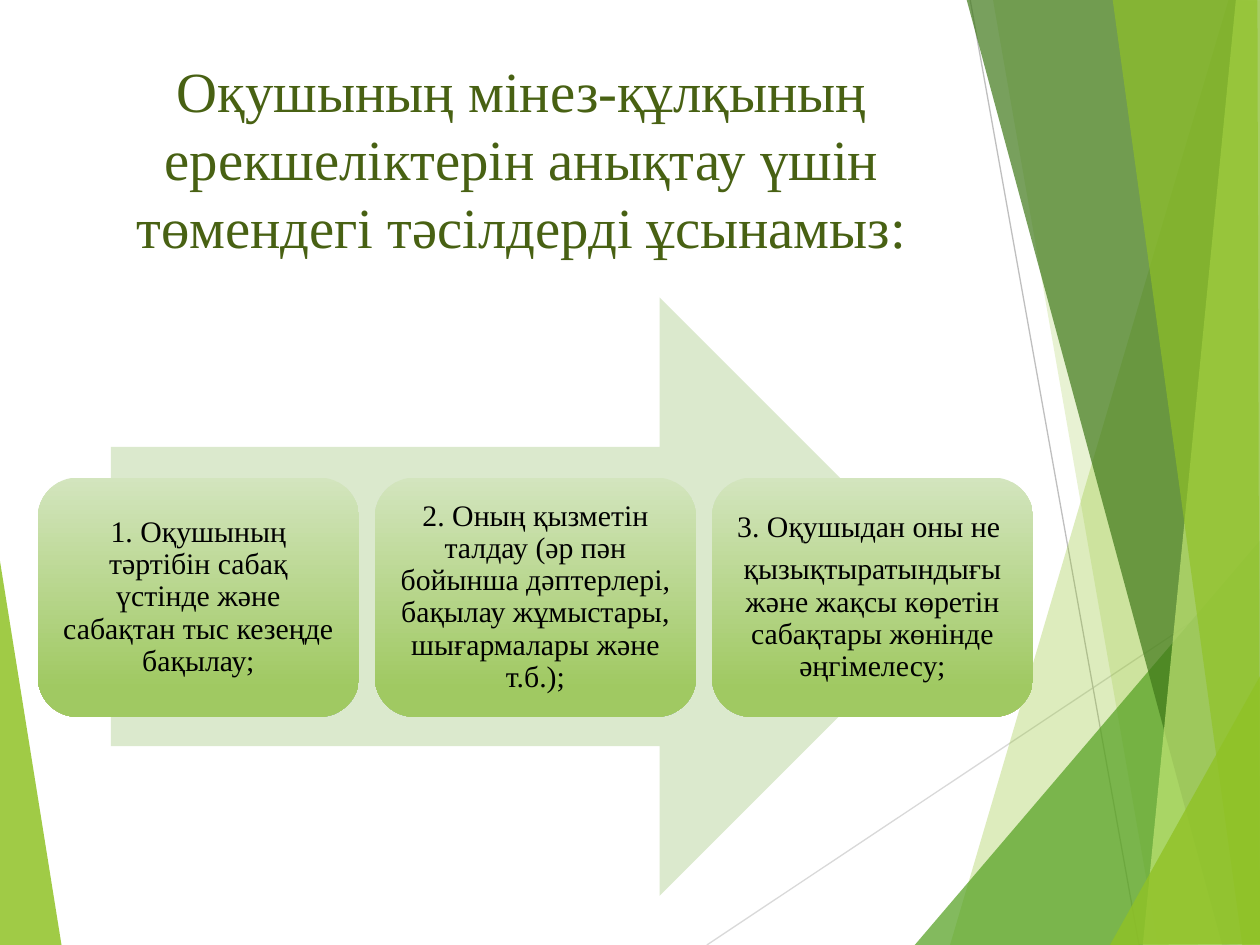
from lxml.etree import SubElement
from pptx import Presentation
from pptx.dml.color import RGBColor
from pptx.enum.shapes import MSO_CONNECTOR, MSO_SHAPE
from pptx.enum.text import MSO_ANCHOR, PP_ALIGN
from pptx.oxml.ns import qn
from pptx.util import Inches, Pt

FONT = "Times New Roman"
LIME = RGBColor(0x90, 0xC2, 0x26)
GREEN = RGBColor(0x54, 0xA0, 0x21)
DARK_GREEN = RGBColor(0x3F, 0x78, 0x19)
LIGHT_LIME = RGBColor(0xC0, 0xE4, 0x74)
PALE_GREEN = RGBColor(0xDB, 0xE9, 0xCD)
CARD_TOP = RGBColor(0xD3, 0xE5, 0xBE)
CARD_BOTTOM = RGBColor(0xA0, 0xC9, 0x62)
TITLE_COLOR = RGBColor(0x48, 0x61, 0x13)
BLACK = RGBColor(0, 0, 0)
LIGHT_GRAY = RGBColor(0xD9, 0xD9, 0xD9)
GRAY = RGBColor(0xBF, 0xBF, 0xBF)

TITLE = "Оқушының мінез-құлқының ерекшеліктерін анықтау үшін төмендегі тәсілдерді ұсынамыз:"
METHODS = [
    ["1. Оқушының тәртібін сабақ үстінде және сабақтан тыс кезеңде бақылау;"],
    ["2. Оның қызметін талдау (әр пән бойынша дәптерлері, бақылау жұмыстары, "
     "шығармалары және т.б.);"],
    ["3. Оқушыдан оны не ",
     "қызықтыратындығы және жақсы көретін сабақтары жөнінде әңгімелесу;"],
]

LEFT_FACET = ([(-0.01, 4.39), (0.49, 7.51), (-0.01, 7.5)], LIME, 85)
RIGHT_FACETS = [
    ([(9.75, 0), (7.54, 7.5), (10.02, 7.51), (10.01, 0.01)], LIME, 30),
    ([(7.88, -0.01), (9.19, 7.5), (10.01, 7.5), (10.01, -0.01)], LIME, 20),
    ([(7.26, 7.5), (10, 4.29), (10.01, 7.5)], GREEN, 72),
    ([(7.67, -0.01), (9.7, 7.5), (10.01, 7.49), (10.01, -0.01)], DARK_GREEN, 70),
    ([(9.81, -0.01), (9.07, 7.5), (10.01, 7.5), (10, -0.01)], LIGHT_LIME, 70),
    ([(8.83, -0.01), (9.86, 7.5), (10, 7.5), (9.98, -0.01)], LIME, 65),
    ([(8.81, 7.5), (10.01, 5.35), (10.01, 7.49)], LIME, 80),
]


class SlideBuilder:
    def __init__(self, slide, font):
        self.shapes = slide.shapes
        self.font = font

    def facet(self, points, color, opacity):
        """Draw a borderless polygon; opacity is in percent."""
        corners = [(Inches(x), Inches(y)) for x, y in points]
        builder = self.shapes.build_freeform(*corners[0])
        builder.add_line_segments(corners[1:], close=True)
        sp = builder.convert_to_shape()
        sp.shadow.inherit = False
        sp.line.fill.background()
        sp.fill.solid()
        sp.fill.fore_color.rgb = color
        clr = sp.fill._xPr.find(qn("a:solidFill"))[0]
        SubElement(clr, qn("a:alpha")).set("val", str(opacity * 1000))

    def line(self, start, end, color):
        ends = [Inches(v) for v in (*start, *end)]
        cxn = self.shapes.add_connector(MSO_CONNECTOR.STRAIGHT, *ends)
        cxn.line.color.rgb = color
        cxn.line.width = Pt(0.75)
        SubElement(cxn._element.spPr, qn("a:effectLst"))

    def shape(self, kind, left, top, width, height):
        box = [Inches(v) for v in (left, top, width, height)]
        sp = self.shapes.add_shape(kind, *box)
        sp.shadow.inherit = False
        sp.line.fill.background()
        return sp

    def arrow(self, left, top, width, height, color):
        sp = self.shape(MSO_SHAPE.RIGHT_ARROW, left, top, width, height)
        sp.fill.solid()
        sp.fill.fore_color.rgb = color

    def card(self, left, top, width, height, paragraphs):
        """Draw a gradient rounded box with its text inset on top."""
        sp = self.shape(MSO_SHAPE.ROUNDED_RECTANGLE, left, top, width, height)
        sp.fill.gradient()
        sp.fill.gradient_angle = 270
        stops = zip(sp.fill.gradient_stops, [(0, CARD_TOP), (0.88, CARD_BOTTOM)])
        for stop, (position, color) in stops:
            stop.position = position
            stop.color.rgb = color
        pad = 0.095
        tf = self.text(left + pad, top + pad, width - 2 * pad, height - 2 * pad,
                       paragraphs, 17, BLACK, MSO_ANCHOR.MIDDLE)
        tf.margin_left = tf.margin_right = Inches(0.07)
        tf.margin_top = tf.margin_bottom = Inches(0.07)
        for p in tf.paragraphs:
            p.line_spacing = 0.9
            p.space_after = Pt(6)

    def text(self, left, top, width, height, paragraphs, size, color, anchor):
        box = [Inches(v) for v in (left, top, width, height)]
        tf = self.shapes.add_textbox(*box).text_frame
        tf.word_wrap = True
        tf.vertical_anchor = anchor
        tf.text = "\n".join(paragraphs)
        for p in tf.paragraphs:
            p.alignment = PP_ALIGN.CENTER
            for r in p.runs:
                r.font.name = self.font
                r.font.size = Pt(size)
                r.font.color.rgb = color
        return tf


def main():
    prs = Presentation()
    prs.slide_width, prs.slide_height = Inches(10), Inches(7.5)
    s = SlideBuilder(prs.slides.add_slide(prs.slide_layouts[6]), FONT)

    s.facet(*LEFT_FACET)
    s.line((5.61, 7.5), (10.01, 4.57), LIGHT_GRAY)
    s.line((7.7, 0), (9.04, 7.5), GRAY)
    for facet in RIGHT_FACETS:
        s.facet(*facet)

    s.text(0.67, 0.39, 6.94, 1.97, [TITLE], 32.4, TITLE_COLOR, MSO_ANCHOR.TOP)
    s.arrow(0.88, 2.36, 6.73, 4.75, PALE_GREEN)
    for i, paragraphs in enumerate(METHODS):
        s.card(0.3 + i * 2.675, 3.79, 2.55, 1.9, paragraphs)

    prs.save("out.pptx")


if __name__ == "__main__":
    main()
